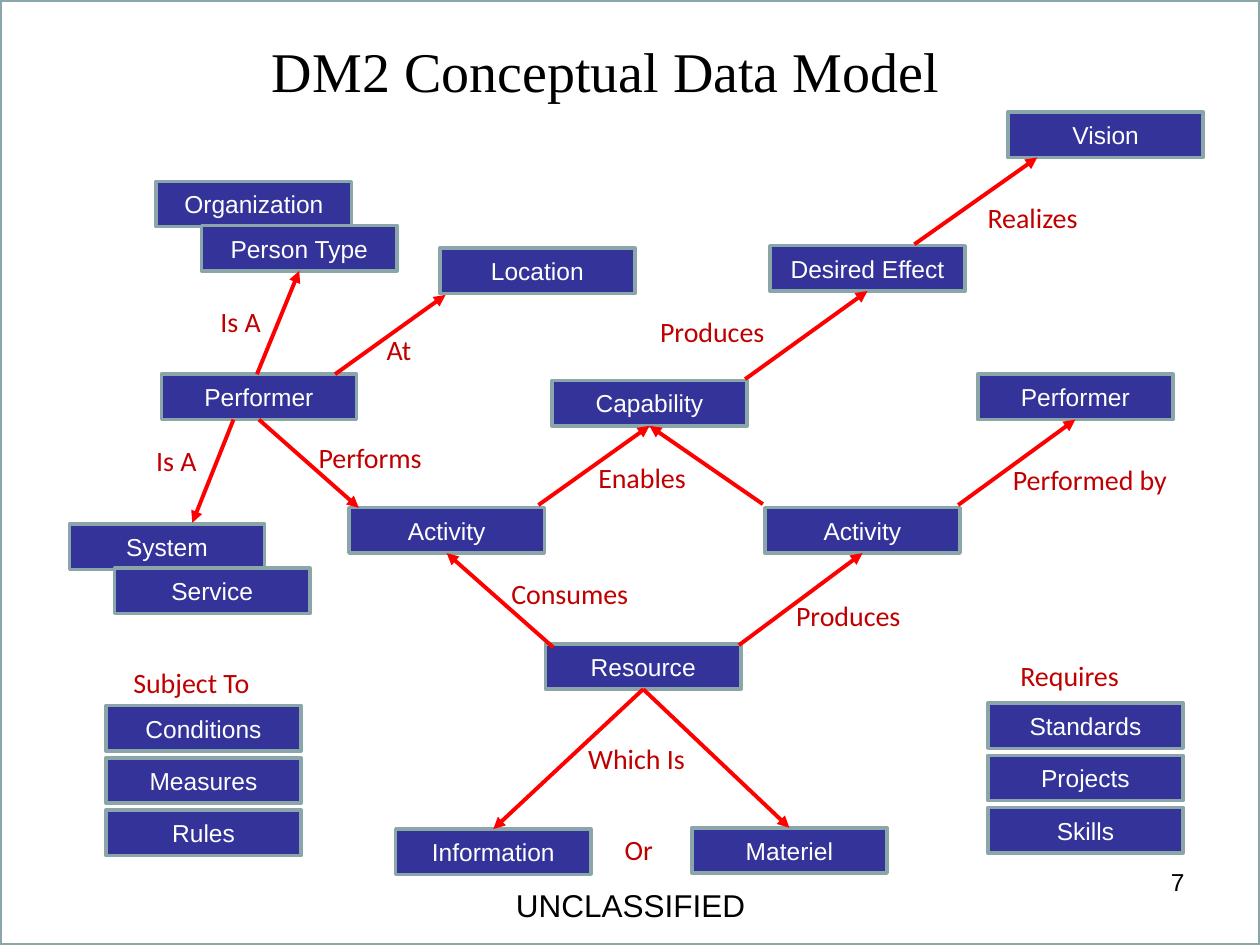
from lxml import etree
from pptx import Presentation
from pptx import util as u
from pptx.dml.color import RGBColor
from pptx.enum import shapes, text
from pptx.oxml.ns import qn

# The slide is a grid of 100 columns by 75 rows.
CELL = u.Inches(0.1)
COLUMNS, ROWS = 100, 75
BOX_W, BOX_H = 15.5, 3.6
OVERLAP = (3.6, 3.5)
LIST_STEP = 4.15

COLORS = {
    "paper": "FFFFFF", "ink": "000000", "box": "333399",
    "edge": "8AA6A8", "arrow": "FF0000", "relation": "C00000",
}

# key: (label, column, row)
CONCEPTS = {
    "performer": ("Performer", 12.8, 29.7),
    "consumer": ("Activity", 27.7, 40.3),
    "resource": ("Resource", 43.3, 51.1),
    "doer": ("Performer", 77.6, 29.7),
    "producer": ("Activity", 60.7, 40.3),
    "materiel": ("Materiel", 54.9, 65.7),
    "information": ("Information", 31.4, 65.8),
    "capability": ("Capability", 43.8, 30.2),
    "effect": ("Desired Effect", 61.1, 19.5),
    "vision": ("Vision", 80, 8.9),
    "location": ("Location", 34.9, 19.7),
}

# (labels, first column, first row, column step, row step)
STACKS = [
    (["Organization", "Person Type"], 12.4, 14.4, *OVERLAP),
    (["System", "Service"], 5.5, 41.6, *OVERLAP),
    (["Conditions", "Measures", "Rules"], 8.4, 56, 0, LIST_STEP),
    (["Standards", "Projects", "Skills"], 78.4, 55.8, 0, LIST_STEP),
]

# (from, share across, share down, to, share across, share down)
ARROWS = [
    ("performer", 0.5, 1, "consumer", 0.05, 0),
    ("resource", 0.04, 0.08, "consumer", 0.5, 1),
    ("resource", 0.99, 0.03, "producer", 0.5, 1),
    ("producer", 0.99, -0.06, "doer", 0.5, 1),
    ("resource", 0.5, 1, "information", 0.5, 0),
    ("resource", 0.5, 1, "materiel", 0.5, 0),
    ("consumer", 0.97, -0.06, "capability", 0.5, 1),
    ("producer", -0.01, -0.08, "capability", 0.5, 1),
    ("capability", 0.99, -0.03, "effect", 0.5, 1),
    ("effect", 0.74, -0.03, "vision", 0.15, 1),
    ("performer", 0.49, 0, "Person Type", 0.5, 1),
    ("performer", 0.37, 1, "System", 0.63, -0.03),
    ("performer", 0.89, 0, "location", 0.03, 1.03),
]

# (label, column, row, width)
RELATIONS = [
    ("Performs", 24.3, 34.5, 11.9), ("Consumes", 39.6, 45.3, 11.3),
    ("Produces", 62.2, 47, 10.4), ("Performed by", 79.4, 36.2, 16.5),
    ("Which Is", 45.7, 58.4, 11.2), ("Or", 48.6, 65.6, 4.7),
    ("Enables", 46.5, 36.1, 10.6), ("Produces", 51.4, 24.5, 12.2),
    ("Is A", 11.4, 34.7, 6.1), ("Is A", 16.5, 23.7, 6.1),
    ("Realizes", 77.4, 15.4, 11), ("At", 29.7, 25.9, 4.4),
    ("Subject To", 9.6, 52.3, 13.3), ("Requires", 80, 51.8, 11.6),
]


def grid(*cells):
    return [round(cell * CELL) for cell in cells]


def color(name):
    return RGBColor.from_string(COLORS[name])


def write(frame, words, size, font, ink, align):
    paragraph = frame.paragraphs[0]
    paragraph.alignment = align
    run = paragraph.add_run()
    run.text = words
    run.font.size = u.Pt(size)
    run.font.name = font
    run.font.color.rgb = color(ink)


def add_rectangle(slide, place, fill):
    rectangle = slide.shapes.add_shape(shapes.MSO_SHAPE.RECTANGLE, *grid(*place))
    rectangle.shadow.inherit = False
    rectangle.fill.solid()
    rectangle.fill.fore_color.rgb = color(fill)
    rectangle.line.color.rgb = color("edge")
    rectangle.line.width = u.Pt(2)
    return rectangle


def add_frame(slide):
    """Outline the whole slide, behind everything else."""
    frame = add_rectangle(slide, (0, 0, COLUMNS, ROWS), "paper")
    slide.shapes._spTree.insert(2, frame._element)


def add_title(slide, words):
    title = slide.shapes.title
    title.left, title.top, title.width, title.height = grid(12.5, 0.9, 72.3, 9.4)
    title.text_frame.vertical_anchor = text.MSO_ANCHOR.MIDDLE
    write(title.text_frame, words, 32, "Times New Roman", "ink", text.PP_ALIGN.CENTER)


def add_concept(slide, label, column, row):
    concept = add_rectangle(slide, (column, row, BOX_W, BOX_H), "box")
    concept.text_frame.vertical_anchor = text.MSO_ANCHOR.MIDDLE
    write(concept.text_frame, label, 14, "Arial", "paper", text.PP_ALIGN.CENTER)


def add_relation(slide, label, column, row, width):
    relation = slide.shapes.add_textbox(*grid(column, row, width, 3.7))
    relation.text_frame.word_wrap = False
    relation.text_frame.auto_size = text.MSO_AUTO_SIZE.SHAPE_TO_FIT_TEXT
    write(relation.text_frame, label, 16, "Calibri", "relation", text.PP_ALIGN.LEFT)


def add_footer(slide, words, place, size, align):
    footer = slide.shapes.add_textbox(*grid(*place))
    footer.text_frame.word_wrap = True
    write(footer.text_frame, words, size, "Arial", "ink", align)


def add_arrow(slide, start, end):
    arrow = slide.shapes.add_connector(
        shapes.MSO_CONNECTOR.STRAIGHT, *grid(*start, *end))
    arrow.line.color.rgb = color("arrow")
    arrow.line.width = u.Pt(2.25)
    etree.SubElement(arrow.line._get_or_add_ln(), qn("a:tailEnd"), type="triangle")
    etree.SubElement(arrow._element.spPr, qn("a:effectLst"))


def place_concepts():
    """Join the single concepts and the stacked ones, keyed by name."""
    concepts = dict(CONCEPTS)
    for labels, column, row, across, down in STACKS:
        for i, label in enumerate(labels):
            concepts[label] = (label, column + i * across, row + i * down)
    return concepts


def point_on(concept, across, down):
    _, column, row = concept
    return column + across * BOX_W, row + down * BOX_H


def main():
    deck = Presentation()
    deck.slide_width, deck.slide_height = grid(COLUMNS, ROWS)
    slide = deck.slides.add_slide(deck.slide_layouts[5])
    add_frame(slide)
    add_title(slide, "DM2 Conceptual Data Model ")

    concepts = place_concepts()
    for concept in concepts.values():
        add_concept(slide, *concept)
    for source, x1, y1, target, x2, y2 in ARROWS:
        add_arrow(slide, point_on(concepts[source], x1, y1),
                  point_on(concepts[target], x2, y2))
    for relation in RELATIONS:
        add_relation(slide, *relation)

    add_footer(slide, "7", (71.7, 68.3, 23.3, 5.2), 14, text.PP_ALIGN.RIGHT)
    add_footer(slide, "UNCLASSIFIED", (34.2, 69.8, 31.7, 5.2), 18, text.PP_ALIGN.CENTER)
    deck.save("out.pptx")


if __name__ == "__main__":
    main()
